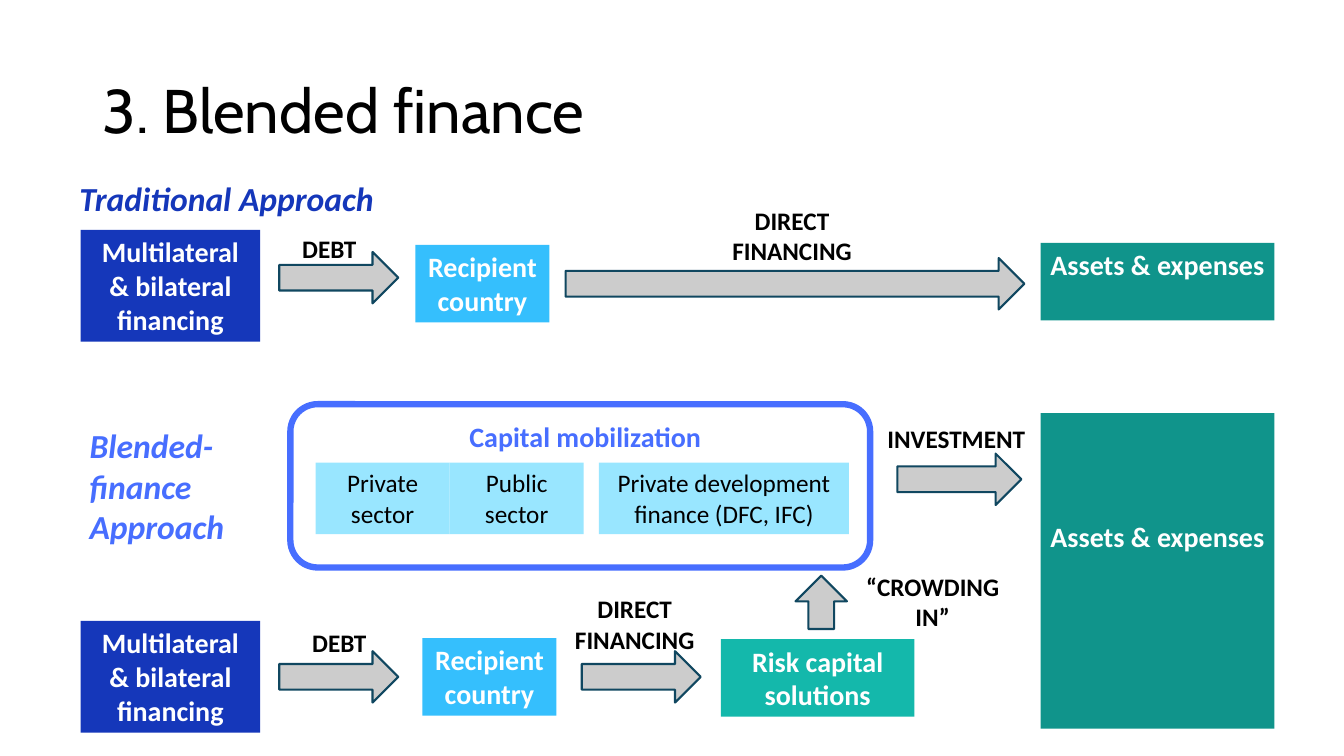
import pptx
import pptx.util
import pptx.dml.color
import pptx.enum.shapes
import pptx.enum.text

Inches = pptx.util.Inches
Shape = pptx.enum.shapes.MSO_SHAPE
Align = pptx.enum.text.PP_ALIGN
Anchor = pptx.enum.text.MSO_ANCHOR

COLORS = {
    "white": "FFFFFF",
    "black": "000000",
    "navy": "1537BA",
    "blue": "476EFF",
    "sky": "35BFFD",
    "pale": "99E6FF",
    "green": "10948B",
    "teal": "14B8AB",
    "gray": "CCCCCC",
    "outline": "104760",
}


class FinanceSlide:
    body_font = "Calibri"
    title_font = "Cabin"

    def __init__(self, deck):
        self.page = deck.slides.add_slide(deck.slide_layouts[6])

    def color(self, name):
        return pptx.dml.color.RGBColor.from_string(COLORS[name])

    def set_text(self, box, text, size, color, bold=False, italic=False,
                 align=Align.CENTER, font=body_font):
        frame = box.text_frame
        frame.word_wrap = True
        frame.vertical_anchor = Anchor.TOP
        frame.text = text
        para = frame.paragraphs[0]
        para.alignment = align
        for span in para.runs:
            span.font.name = font
            span.font.size = pptx.util.Pt(size)
            span.font.bold = bold
            span.font.italic = italic
            span.font.color.rgb = self.color(color)
        return para

    def shape(self, kind, place, fill=None, line=None, width=1.5):
        box = self.page.shapes.add_shape(kind, *map(Inches, place))
        box.shadow.inherit = False
        if fill:
            box.fill.solid()
            box.fill.fore_color.rgb = self.color(fill)
        else:
            box.fill.background()
        if line:
            box.line.color.rgb = self.color(line)
            box.line.width = pptx.util.Pt(width)
        else:
            box.line.fill.background()
        return box

    def block(self, text, place, fill, size=20, color="white", bold=True):
        box = self.shape(Shape.RECTANGLE, place, fill)
        self.set_text(box, text, size, color, bold)
        return box

    def arrow(self, place, rotation=0):
        box = self.shape(Shape.RIGHT_ARROW, place, "gray", "outline")
        box.rotation = rotation

    def label(self, text, place, size=18, color="black", **style):
        box = self.page.shapes.add_textbox(*map(Inches, place))
        self.set_text(box, text, size, color, bold=True, **style)

    def title(self, text, place):
        box = self.page.shapes.add_textbox(*map(Inches, place))
        para = self.set_text(box, text, 44, "black", align=Align.LEFT, font=self.title_font)
        para.line_spacing = 0.9
        box.text_frame.vertical_anchor = Anchor.MIDDLE


def main():
    deck = pptx.Presentation()
    deck.slide_width = Inches(13.33)
    deck.slide_height = Inches(7.5)
    slide = FinanceSlide(deck)

    slide.title("3. Blended finance", (0.92, 0.4, 11.5, 1.45))

    for lender_top, debt_top, country_left, country_top in (
        (2.28, 2.5, 4.12, 2.43),
        (6.16, 6.46, 4.19, 6.33),
    ):
        slide.block("Multilateral & bilateral financing", (0.8, lender_top, 1.78, 1.11), "navy")
        slide.arrow((2.77, debt_top, 1.18, 0.51))
        slide.block("Recipient country", (country_left, country_top, 1.33, 0.77), "sky")

    slide.arrow((5.61, 2.56, 4.55, 0.51))
    slide.block("Assets & expenses", (10.32, 2.41, 2.32, 0.77), "green")
    blended_assets = slide.block("Assets & expenses", (10.32, 4.1, 2.32, 3.13), "green")
    blended_assets.text_frame.margin_top = Inches(1.05)
    slide.block("Risk capital solutions", (7.15, 6.34, 1.92, 0.77), "teal")
    slide.arrow((5.77, 6.46, 1.18, 0.51))

    slide.shape(Shape.ROUNDED_RECTANGLE, (2.88, 4.01, 5.75, 1.62), line="blue", width=4.5)
    for text, left, width in (
        ("Private sector", 3.13, 1.33),
        ("Public sector", 4.46, 1.33),
        ("Private development finance (DFC, IFC)", 5.94, 2.48),
    ):
        slide.block(text, (left, 4.59, width, 0.71), "pale", 18, "black", False)
    slide.label("Capital mobilization", (3.8, 4.11, 4.01, 0.44), 20, "blue")

    slide.arrow((7.88, 5.72, 0.53, 0.51), rotation=270)
    slide.arrow((8.9, 4.5, 1.23, 0.51))

    for text, place in (
        ("DEBT", (2.49, 2.27, 1.55, 0.4)),
        ("DIRECT FINANCING", (7, 1.99, 1.71, 0.73)),
        ("DEBT", (2.62, 6.17, 1.49, 0.4)),
        ("“CROWDING IN”", (8.36, 5.62, 1.78, 0.71)),
        ("INVESTMENT", (8.65, 4.15, 1.67, 0.4)),
        ("DIRECT FINANCING", (5.44, 5.84, 1.71, 0.73)),
    ):
        slide.label(text, place)

    for text, place, color in (
        ("Traditional Approach", (0.69, 1.72, 5.53, 0.5), "navy"),
        ("Blended-finance Approach", (0.79, 4.17, 2.02, 1.31), "blue"),
    ):
        slide.label(text, place, 24, color, italic=True, align=Align.LEFT)

    deck.save("out.pptx")


if __name__ == "__main__":
    main()
